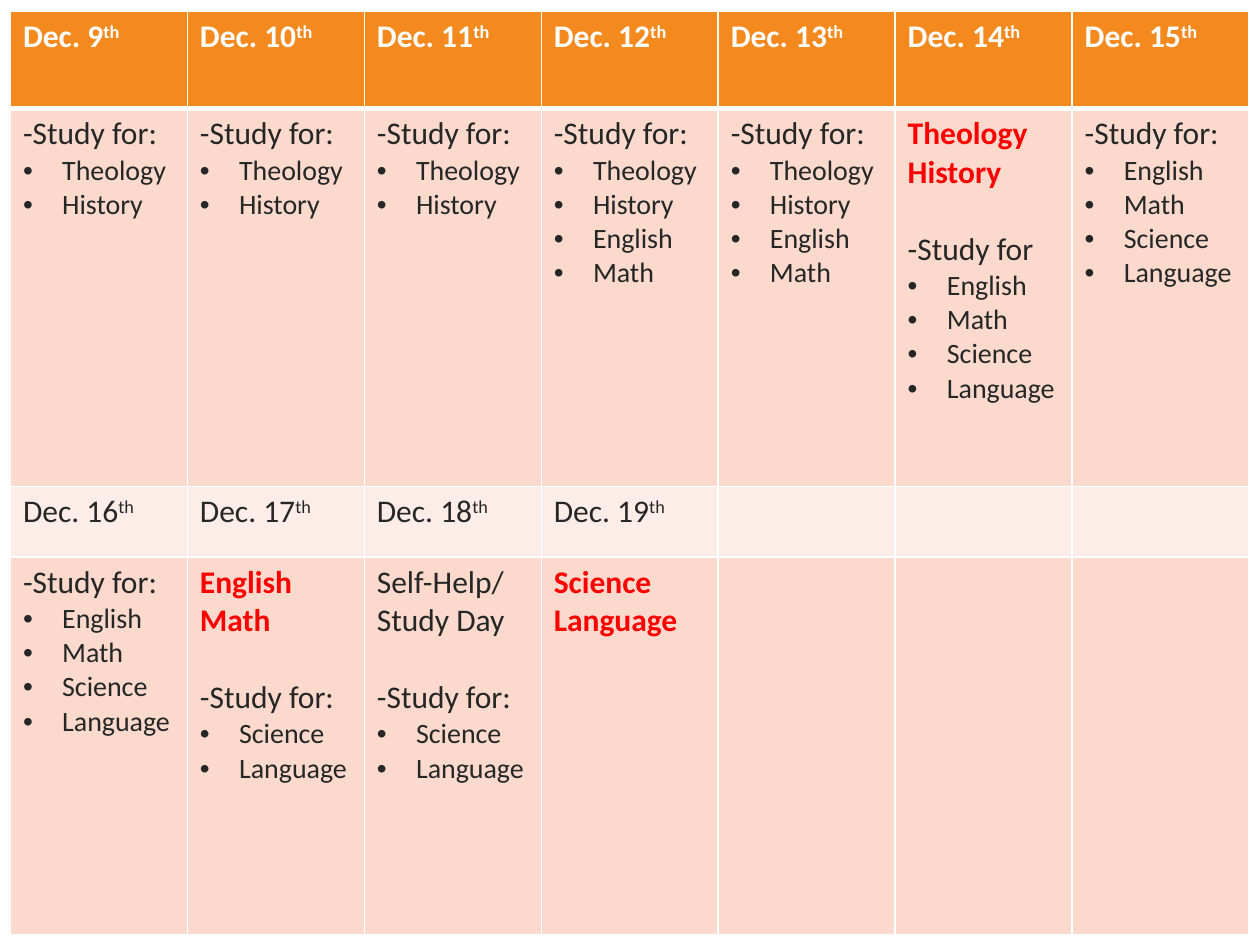
from lxml import etree
from pptx import Presentation
from pptx.dml.color import RGBColor
from pptx.oxml.ns import qn
from pptx.util import Cm, Pt

COLORS = {
    "header": "F4891E",
    "date": "FDEDE8",
    "plan": "FBDACD",
    "white": "FFFFFF",
    "text": "262626",
    "exam": "FF0000",
}
FONT = "Calibri"
DAYS = 7
ROW_HEIGHTS = [1.96, 7.62, 1.42, 7.62]
STUDY = "-Study for:"

EARLY = ["Theology", "History"]
MIDDLE = ["English", "Math"]
LATE = ["Science", "Language"]

WEEKS = [
    [
        ("Dec. 9", [], "", STUDY, EARLY),
        ("Dec. 10", [], "", STUDY, EARLY),
        ("Dec. 11", [], "", STUDY, EARLY),
        ("Dec. 12", [], "", STUDY, EARLY + MIDDLE),
        ("Dec. 13", [], "", STUDY, EARLY + MIDDLE),
        ("Dec. 14", EARLY, "", "-Study for", MIDDLE + LATE),
        ("Dec. 15", [], "", STUDY, MIDDLE + LATE),
    ],
    [
        ("Dec. 16", [], "", STUDY, MIDDLE + LATE),
        ("Dec. 17", MIDDLE, "", STUDY, LATE),
        ("Dec. 18", [], "Self-Help/Study Day", STUDY, LATE),
        ("Dec. 19", LATE, "", "", []),
    ],
]


def rgb(name):
    return RGBColor.from_string(COLORS[name])


def style_run(r, color, size=18, bold=False):
    r.font.name = FONT
    r.font.size = Pt(size)
    r.font.bold = bold
    r.font.color.rgb = rgb(color)


def add_bullet(p):
    pPr = p._p.get_or_add_pPr()
    pPr.set("marL", str(Cm(0.79)))
    pPr.set("indent", str(-Cm(0.79)))
    etree.SubElement(pPr, qn("a:buFont")).set("typeface", "Arial")
    etree.SubElement(pPr, qn("a:buChar")).set("char", "•")


def style_cell(cell, fill, top, bottom):
    cell.fill.solid()
    cell.fill.fore_color.rgb = rgb(fill)
    tcPr = cell._tc.get_or_add_tcPr()
    borders = [("a:lnL", 1), ("a:lnR", 1), ("a:lnT", top), ("a:lnB", bottom)]
    for i, (tag, width) in enumerate(borders):
        ln = etree.Element(qn(tag), w=str(Pt(width)))
        solid = etree.SubElement(ln, qn("a:solidFill"))
        etree.SubElement(solid, qn("a:srgbClr")).set("val", COLORS["white"])
        tcPr.insert(i, ln)


def fill_date(cell, date, color, bold):
    p = cell.text_frame.paragraphs[0]
    p.text = date
    suffix = p.add_run()
    suffix.text = "th"
    for r in p.runs:
        style_run(r, color, bold=bold)
    suffix._r.get_or_add_rPr().set("baseline", "30000")


def fill_plan(cell, exams, note, heading, subjects):
    lines = [(exam, "exam") for exam in exams]
    lines += [(text, kind) for text, kind in ((note, "note"), (heading, "heading")) if text]
    lines += [(subject, "subject") for subject in subjects]
    tf = cell.text_frame
    for i, (text, kind) in enumerate(lines):
        p = tf.add_paragraph() if i else tf.paragraphs[0]
        p.text = text
        if kind == "subject":
            add_bullet(p)
        if kind == "heading" and i:
            p.space_before = Pt(22)
        exam = kind == "exam"
        style_run(p.runs[0], "exam" if exam else "text",
                  16 if kind == "subject" else 18, exam)


def add_calendar(slide, left, top, width):
    height = Cm(sum(ROW_HEIGHTS))
    table = slide.shapes.add_table(len(ROW_HEIGHTS), DAYS, left, top, width, height).table
    table.horz_banding = False
    for row, row_height in zip(table.rows, ROW_HEIGHTS):
        row.height = Cm(row_height)
    for col in table.columns:
        col.width = width // DAYS
    fills = ["header", "plan", "date", "plan"]
    edges = [1, 3, 1, 1, 1]
    for i, fill in enumerate(fills):
        for cell in table.rows[i].cells:
            style_cell(cell, fill, edges[i], edges[i + 1])
    for i, week in enumerate(WEEKS):
        first = i == 0
        for j, (date, *plan) in enumerate(week):
            fill_date(table.cell(2 * i, j), date, "white" if first else "text", first)
            fill_plan(table.cell(2 * i + 1, j), *plan)


def main():
    prs = Presentation()
    prs.slide_width = Cm(25.4)
    prs.slide_height = Cm(19.05)
    slide = prs.slides.add_slide(prs.slide_layouts[6])
    add_calendar(slide, Cm(0.21), Cm(0.23), Cm(24.97))
    prs.save("out.pptx")


if __name__ == "__main__":
    main()
